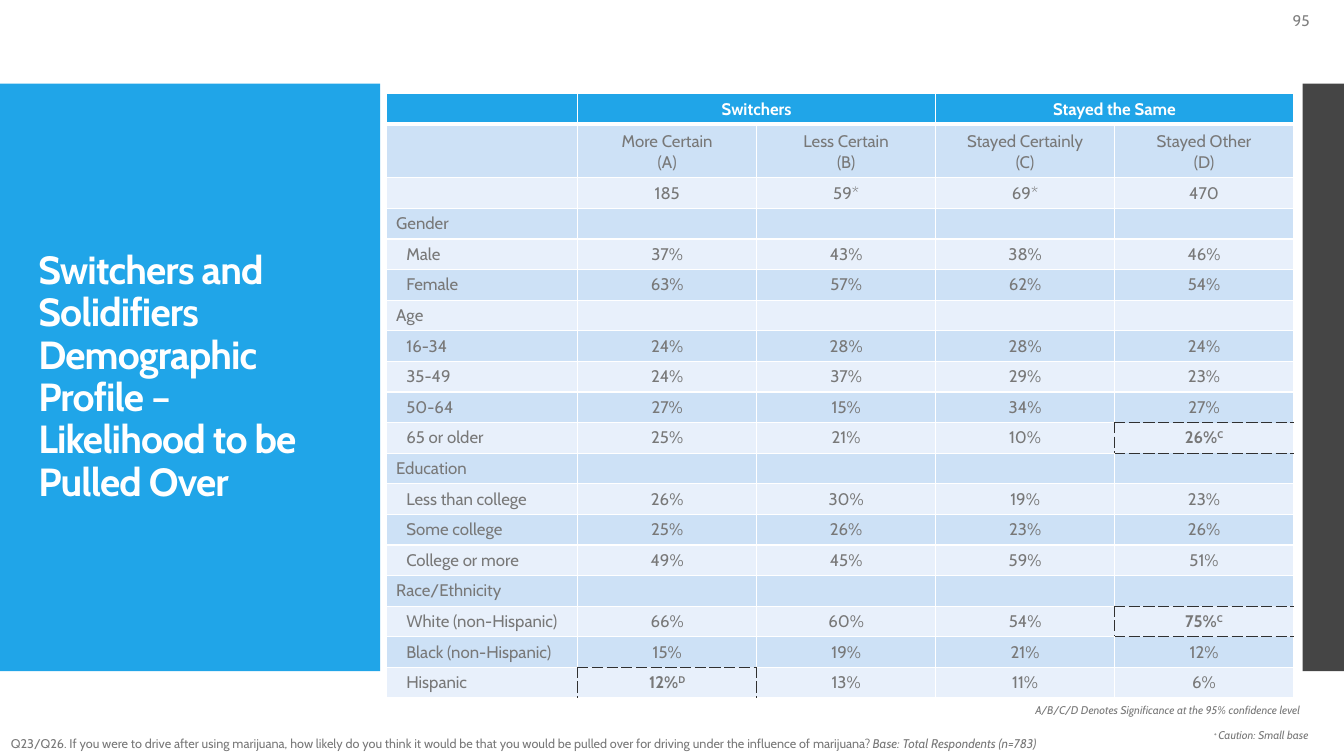
import pptx
import pptx.dml.color
import pptx.enum.shapes
import pptx.enum.text
import pptx.oxml.ns
import pptx.util
from lxml import etree

RGBColor = pptx.dml.color.RGBColor
Inches = pptx.util.Inches
Pt = pptx.util.Pt
ALIGN = pptx.enum.text.PP_ALIGN
ANCHOR = pptx.enum.text.MSO_ANCHOR
qn = pptx.oxml.ns.qn

BLUE = RGBColor(0x20, 0xA5, 0xE8)
CHARCOAL = RGBColor(0x45, 0x45, 0x45)
WHITE = RGBColor(0xFF, 0xFF, 0xFF)
TEXT = RGBColor(0x78, 0x78, 0x78)
NUMBER = RGBColor(0x80, 0x80, 0x80)
BAND_DARK = RGBColor(0xCD, 0xE1, 0xF6)
BAND_LIGHT = RGBColor(0xE8, 0xF0, 0xFB)
DASH = RGBColor(0x30, 0x30, 0x30)
FONT = "Cabin"

TITLE = "Switchers and Solidifiers Demographic Profile – Likelihood to be Pulled Over"
QUESTION = (
    "Q23/Q26. If you were to drive after using marijuana, how likely do you think it would be "
    "that you would be pulled over for driving under the influence of marijuana? "
)
GROUPS = ["", "Switchers", "", "Stayed the Same", ""]
COLUMNS = ["", "More Certain\n(A)", "Less Certain\n(B)", "Stayed Certainly\n(C)", "Stayed Other\n(D)"]
BASES = ["", "185", "59*", "69*", "470"]
SECTIONS = {
    "Gender": {
        "Male": (37, 43, 38, 46),
        "Female": (63, 57, 62, 54),
    },
    "Age": {
        "16-34": (24, 28, 28, 24),
        "35-49": (24, 37, 29, 23),
        "50-64": (27, 15, 34, 27),
        "65 or older": (25, 21, 10, 26),
    },
    "Education": {
        "Less than college": (26, 30, 19, 23),
        "Some college": (25, 26, 23, 26),
        "College or more": (49, 45, 59, 51),
    },
    "Race/Ethnicity": {
        "White (non-Hispanic)": (66, 60, 54, 75),
        "Black (non-Hispanic)": (15, 19, 21, 12),
        "Hispanic": (12, 13, 11, 6),
    },
}
SIGNIFICANT = {(10, 4): "C", (16, 4): "C", (18, 1): "D"}
SIDES = {"lnL": (0, -1), "lnR": (0, 1), "lnT": (-1, 0), "lnB": (1, 0)}


def add_span(para, text, size, color=TEXT, bold=False, italic=False, raised=False):
    """Add one formatted run to a paragraph."""
    span = para.add_run()
    span.text = text
    font = span.font
    font.name, font.size, font.bold, font.italic = FONT, Pt(size), bold, italic
    font.color.rgb = color
    if raised:
        span._r.get_or_add_rPr().set("baseline", "30000")
    return span


def add_bar(page, box, color):
    """Place a plain coloured bar behind the title."""
    bar = page.shapes.add_shape(
        pptx.enum.shapes.MSO_SHAPE.RECTANGLE, *map(Inches, box))
    bar.shadow.inherit = False
    bar.fill.solid()
    bar.fill.fore_color.rgb = color
    bar.line.fill.background()
    page.shapes.title.element.addprevious(bar.element)


def add_title(page, box):
    """Move and format the title placeholder."""
    title = page.shapes.title
    title.left, title.top, title.width, title.height = map(Inches, box)
    frame = title.text_frame
    frame.word_wrap = True
    frame.auto_size = pptx.enum.text.MSO_AUTO_SIZE.NONE
    frame.vertical_anchor = ANCHOR.MIDDLE
    para = frame.paragraphs[0]
    para.alignment = ALIGN.LEFT
    para.line_spacing = 0.9
    span = add_span(para, TITLE, 28, WHITE, bold=True)
    span._r.get_or_add_rPr().set("spc", "-60")


def add_note(page, box, size, spans, color=TEXT, align=ALIGN.LEFT, anchor=ANCHOR.TOP, wrap=True):
    """Place a one-paragraph text box made of (text, style) spans."""
    frame = page.shapes.add_textbox(*map(Inches, box)).text_frame
    frame.word_wrap = wrap
    frame.vertical_anchor = anchor
    para = frame.paragraphs[0]
    para.alignment = align
    for text, style in spans:
        add_span(para, text, size, color, **style)


def set_borders(cell, row, column, size):
    """Draw white cell edges, dashed where they touch a significant value."""
    properties = cell._tc.get_or_add_tcPr()
    for side, (down, across) in SIDES.items():
        neighbour = (row + down, column + across)
        inside = 0 <= neighbour[0] < size[0] and 0 <= neighbour[1] < size[1]
        dashed = inside and ((row, column) in SIGNIFICANT or neighbour in SIGNIFICANT)
        width = Pt(3 if row == 0 and side == "lnB" else 1)
        line = etree.SubElement(properties, qn("a:" + side), w=str(width))
        fill = etree.SubElement(line, qn("a:solidFill"))
        etree.SubElement(fill, qn("a:srgbClr"), val=str(DASH if dashed else WHITE))
        etree.SubElement(line, qn("a:prstDash"), val="dash" if dashed else "solid")


def fill_cell(cell, row, column, text, indent):
    """Write and format the content of one table cell."""
    cell.fill.solid()
    cell.fill.fore_color.rgb = BLUE if row == 0 else BAND_DARK if row % 2 else BAND_LIGHT
    cell.vertical_anchor = (
        ANCHOR.BOTTOM if row == 1 else ANCHOR.MIDDLE if column else ANCHOR.TOP)
    frame = cell.text_frame
    mark = SIGNIFICANT.get((row, column))
    for index, line in enumerate(text.split("\n")):
        para = frame.add_paragraph() if index else frame.paragraphs[0]
        para.alignment = ALIGN.CENTER if column else ALIGN.LEFT
        if indent:
            para._p.get_or_add_pPr().set("marL", str(Inches(0.1)))
        if line:
            add_span(para, line, 12, WHITE if row == 0 else TEXT, bold=row == 0 or bool(mark))
        else:
            blank = etree.SubElement(para._p, qn("a:endParaRPr"), sz="1200")
            etree.SubElement(blank, qn("a:latin"), typeface=FONT)
    if mark:
        add_span(frame.paragraphs[0], mark, 12, bold=True, raised=True)


def add_profile_table(page, box):
    """Place the demographic table in its box."""
    rows = [GROUPS, COLUMNS, BASES]
    for section, lines in SECTIONS.items():
        rows.append([section] + [""] * 4)
        rows += [[label] + [f"{value}%" for value in values] for label, values in lines.items()]
    left, top, width, height = box
    size = (len(rows), len(COLUMNS))
    table = page.shapes.add_table(*size, *map(Inches, box)).table
    label_width, heading_height = 1.9, 0.53
    for column in range(size[1]):
        share = (width - label_width) / (size[1] - 1)
        table.columns[column].width = Inches(share if column else label_width)
    for row, texts in enumerate(rows):
        share = (height - heading_height) / (size[0] - 1)
        table.rows[row].height = Inches(heading_height if row == 1 else share)
        for column, text in enumerate(texts):
            cell = table.cell(row, column)
            set_borders(cell, row, column, size)
            indent = column == 0 and row > 2 and text not in SECTIONS
            fill_cell(cell, row, column, text, indent)
    for column in (1, 3):
        table.cell(0, column).merge(table.cell(0, column + 1))


def build_profile_slide(deck):
    """Build the demographic profile slide."""
    page = deck.slides.add_slide(deck.slide_layouts[5])
    add_bar(page, (0, 0.83, 3.77, 5.83), BLUE)
    add_bar(page, (12.92, 0.83, 0.41, 5.83), CHARCOAL)
    add_title(page, (0.28, 1.23, 3.22, 5.03))
    add_note(page, (12.49, 0.04, 0.6, 0.33), 11, [("95", {})],
             NUMBER, ALIGN.RIGHT, ANCHOR.MIDDLE)
    add_profile_table(page, (3.83, 0.93, 9, 6))
    italic = {"italic": True}
    add_note(page, (10.17, 6.93, 3.16, 0.24), 8,
             [("A/B/C/D Denotes Significance at the 95% confidence level", italic)])
    add_note(page, (11.94, 7.18, 1.25, 0.24), 8,
             [("+ ", {"raised": True}), ("Caution: Small base", italic)], wrap=False)
    add_note(page, (0.01, 7.25, 11.07, 0.25), 9,
             [(QUESTION, {}), ("Base: Total Respondents (n=783)", italic)])


def main():
    """Create the deck and save it."""
    deck = pptx.Presentation()
    deck.slide_width, deck.slide_height = Inches(13.33), Inches(7.5)
    build_profile_slide(deck)
    deck.save("out.pptx")


if __name__ == "__main__":
    main()
